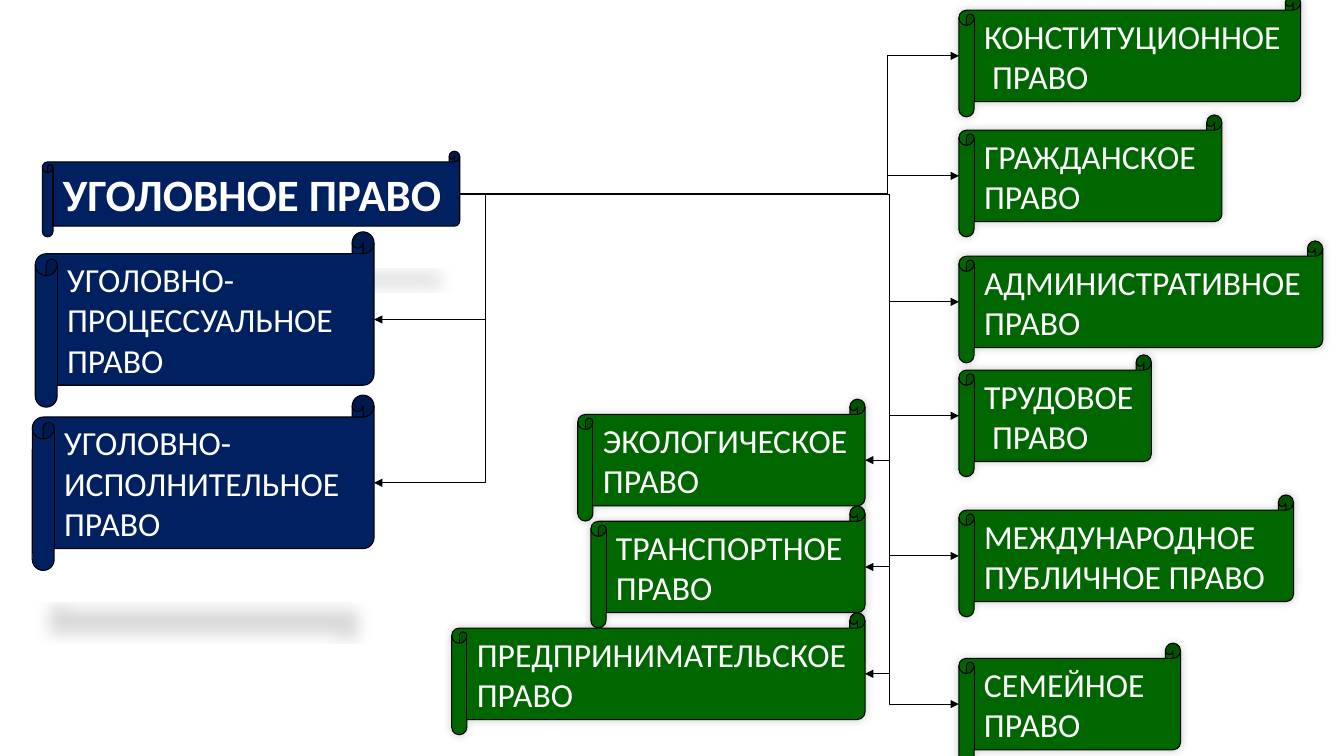
"""Build a slide that links criminal law to the neighbouring branches of law."""
import pptx
import pptx.dml.color
import pptx.enum.shapes
import pptx.enum.text
import pptx.oxml
import pptx.oxml.ns
import pptx.util

Inches = pptx.util.Inches
Color = pptx.dml.color.RGBColor.from_string

THEME = {
    "font": "Calibri",
    "text": "FFFFFF",
    "line": "000000",
    "criminal": "002060",
    "other": "006600",
    "body_size": 24,
    "title_size": 32,
    "line_width": 0.75,
    "hanging": 0.08,
}
SHADOWS = {
    "criminal": ('blurRad="152400" dist="317500" dir="5400000" '
                 'sx="90000" sy="-19000" rotWithShape="0"', 15),
    "other": 'blurRad="76200" dist="0" dir="18900000" rotWithShape="0"'.join(("", "")),
}
SHADOWS["other"] = ('blurRad="76200" dist="0" dir="18900000" rotWithShape="0"', 20)

SLIDE = (13.33, 7.5)
TITLE = ("УГОЛОВНОЕ ПРАВО", 0.42, 1.5, 4.14, 0.85)
HEIGHTS = {"criminal": 1.74, "other": 1.21}
CRIMINAL_RIGHT, CENTRE_RIGHT, RIGHT_LEFT = 3.71, 8.58, 9.51
CRIMINAL_BEND, UPPER_BEND, LOWER_BEND = 4.82, 8.8, 8.82
CENTRE_TOP, CENTRE_PITCH = 3.96, 1.06

CRIMINAL_BRANCHES = [
    ("УГОЛОВНО-\nПРОЦЕССУАЛЬНОЕ\nПРАВО", 2.3, 3.36),
    ("УГОЛОВНО-\nИСПОЛНИТЕЛЬНОЕ\nПРАВО", 3.92, 3.39),
]
CENTRE_BRANCHES = [
    ("ЭКОЛОГИЧЕСКОЕ\nПРАВО", 2.85),
    ("ТРАНСПОРТНОЕ\nПРАВО", 2.72),
    ("ПРЕДПРИНИМАТЕЛЬСКОЕ\nПРАВО", 4.1),
]
RIGHT_BRANCHES = [
    ("КОНСТИТУЦИОННОЕ\nПРАВО", -0.05, 3.39),
    ("ГРАЖДАНСКОЕ\nПРАВО", 1.14, 2.61),
    ("АДМИНИСТРАТИВНОЕ\nПРАВО", 2.39, 3.61),
    ("ТРУДОВОЕ\nПРАВО", 3.52, 1.91),
    ("МЕЖДУНАРОДНОЕ ПУБЛИЧНОЕ ПРАВО", 4.91, 3.32),
    ("СЕМЕЙНОЕ\nПРАВО", 6.38, 2.2),
]
UNWRAPPED = {TITLE[0]} | {RIGHT_BRANCHES[row][0] for row in (0, 1, 3)}
HANGING = {RIGHT_BRANCHES[row][0] for row in (0, 3)}


def element(markup):
    """Parse a drawing element."""
    return pptx.oxml.parse_xml(markup.replace(
        " ", f' {pptx.oxml.ns.nsdecls("a")} ', 1))


def add_scroll(page, text, left, top, width, height, group, size, bold=False):
    """Draw a scroll with its label."""
    scroll = page.shapes.add_shape(
        pptx.enum.shapes.MSO_SHAPE.HORIZONTAL_SCROLL,
        Inches(left), Inches(top), Inches(width), Inches(height))
    scroll.fill.solid()
    scroll.fill.fore_color.rgb = Color(THEME[group])
    scroll.line.color.rgb = Color(THEME["line"])
    scroll.line.width = pptx.util.Pt(THEME["line_width"])
    scroll.shadow.inherit = False
    settings, alpha = SHADOWS[group]
    effects = scroll.element.spPr.find(pptx.oxml.ns.qn("a:effectLst"))
    effects.append(element(
        f'<a:outerShdw {settings}><a:srgbClr val="{THEME["line"]}">'
        f'<a:alpha val="{alpha * 1000}"/></a:srgbClr></a:outerShdw>'))
    frame = scroll.text_frame
    frame.text = text
    frame.word_wrap = text not in UNWRAPPED
    frame.auto_size = pptx.enum.text.MSO_AUTO_SIZE.SHAPE_TO_FIT_TEXT
    frame.vertical_anchor = pptx.enum.text.MSO_ANCHOR.MIDDLE
    for para in frame.paragraphs:
        para.alignment = pptx.enum.text.PP_ALIGN.LEFT
        for span in para.runs:
            span.font.name = THEME["font"]
            span.font.size = pptx.util.Pt(size)
            span.font.bold = bold
            span.font.color.rgb = Color(THEME["text"])
    if text in HANGING:
        properties = frame.paragraphs[-1]._p.get_or_add_pPr()
        properties.set("marL", str(Inches(THEME["hanging"])))


def add_arrow(page, start, end, bend):
    """Draw an elbow arrow that turns at the given horizontal place."""
    arrow = page.shapes.add_connector(
        pptx.enum.shapes.MSO_CONNECTOR.ELBOW,
        *(Inches(length) for length in start + end))
    arrow.line.color.rgb = Color(THEME["line"])
    arrow.line.width = pptx.util.Pt(THEME["line_width"])
    arrow.line._get_or_add_ln().append(element('<a:tailEnd type="triangle"/>'))
    properties = arrow._element.spPr
    properties.append(element("<a:effectLst />"))
    share = round((bend - start[0]) / (end[0] - start[0]) * 100000)
    guides = properties.prstGeom.get_or_add_avLst()
    guides.append(element(f'<a:gd name="adj1" fmla="val {share}"/>'))


def main():
    """Place the scrolls and arrows and save the deck."""
    deck = pptx.Presentation()
    deck.slide_width, deck.slide_height = map(Inches, SLIDE)
    page = deck.slides.add_slide(deck.slide_layouts[6])

    text, left, top, width, height = TITLE
    add_scroll(page, *TITLE, "criminal", THEME["title_size"], True)
    start = (left + width, top + height / 2)

    branches = [(text, top, CRIMINAL_RIGHT - width, width, CRIMINAL_RIGHT,
                 CRIMINAL_BEND, "criminal")
                for text, top, width in CRIMINAL_BRANCHES]
    branches += [(text, top, RIGHT_LEFT, width, RIGHT_LEFT,
                  UPPER_BEND if top + HEIGHTS["other"] / 2 < start[1] else LOWER_BEND,
                  "other")
                 for text, top, width in RIGHT_BRANCHES]
    branches += [(text, CENTRE_TOP + row * CENTRE_PITCH, CENTRE_RIGHT - width, width,
                  CENTRE_RIGHT, LOWER_BEND, "other")
                 for row, (text, width) in enumerate(CENTRE_BRANCHES)]

    for text, top, left, width, target, bend, group in branches:
        height = HEIGHTS[group]
        add_scroll(page, text, left, top, width, height, group, THEME["body_size"])
        add_arrow(page, start, (target, top + height / 2), bend)
    deck.save("out.pptx")


if __name__ == "__main__":
    main()
